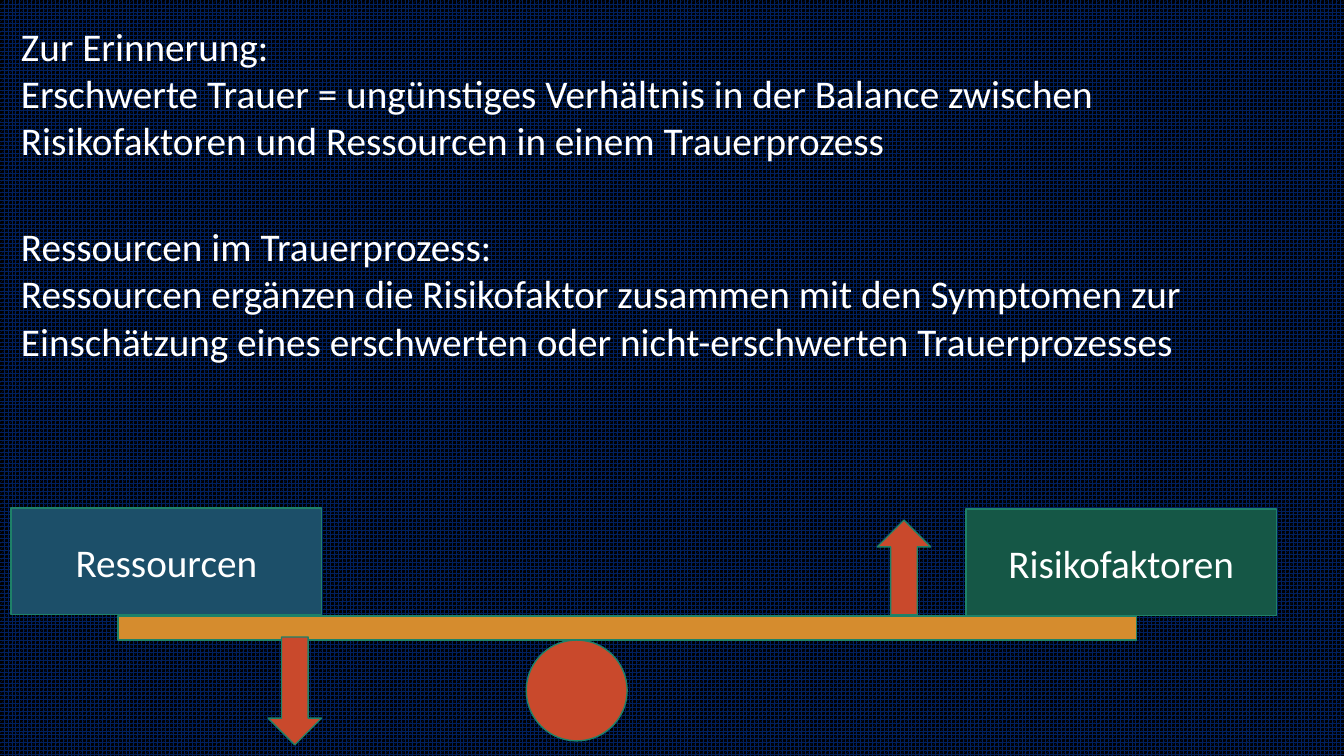
from pptx import Presentation
from pptx.dml.color import RGBColor
from pptx.enum.dml import MSO_PATTERN
from pptx.enum.shapes import MSO_SHAPE
from pptx.enum.text import MSO_ANCHOR, MSO_AUTO_SIZE, PP_ALIGN
from pptx.util import Inches, Pt

SPHERE = MSO_PATTERN.SPHERE
RECT, OVAL, DOWN_ARROW = MSO_SHAPE.RECTANGLE, MSO_SHAPE.OVAL, MSO_SHAPE.DOWN_ARROW
MIDDLE, CENTER = MSO_ANCHOR.MIDDLE, PP_ALIGN.CENTER
FIT_SHAPE = MSO_AUTO_SIZE.SHAPE_TO_FIT_TEXT

WHITE, BLACK, NAVY = "FFFFFF", "000000", "002060"
OUTLINE, ORANGE, RED = "1E8168", "D58C2E", "C9492C"
BLUE, GREEN = "1C4F69", "155746"
FONT = {"name": "Calibri", "size": Pt(28)}

REMINDER = (
    "Zur Erinnerung:",
    "Erschwerte Trauer = ungünstiges Verhältnis in der Balance zwischen "
    "Risikofaktoren und Ressourcen in einem Trauerprozess",
)
RESOURCES = (
    "Ressourcen im Trauerprozess:",
    "Ressourcen ergänzen die Risikofaktor zusammen mit den Symptomen zur "
    "Einschätzung eines erschwerten oder nicht-erschwerten Trauerprozesses",
)


def rgb(value):
    return RGBColor.from_string(value)


def add_run(p, text):
    r = p.add_run()
    r.text = text
    for name, value in FONT.items():
        setattr(r.font, name, value)
    r.font.color.rgb = rgb(WHITE)


def set_background(s):
    fill = s.background.fill
    fill.patterned()
    fill.pattern = SPHERE
    fill.fore_color.rgb = rgb(NAVY)
    fill.back_color.rgb = rgb(BLACK)


def add_text_block(s, left, top, width, height, lines):
    box = s.shapes.add_textbox(*map(Inches, (left, top, width, height)))
    tf = box.text_frame
    tf.word_wrap = True
    tf.auto_size = FIT_SHAPE
    for i, line in enumerate(lines):
        p = tf.add_paragraph() if i else tf.paragraphs[0]
        add_run(p, line)


def add_part(s, kind, left, top, width, height, color, text="", rotation=0):
    """Add one filled, outlined part of the seesaw."""
    sp = s.shapes.add_shape(kind, *map(Inches, (left, top, width, height)))
    sp.shadow.inherit = False
    sp.rotation = rotation
    sp.fill.solid()
    sp.fill.fore_color.rgb = rgb(color)
    sp.line.color.rgb = rgb(OUTLINE)
    sp.line.width = Pt(1)
    if text:
        tf = sp.text_frame
        tf.vertical_anchor = MIDDLE
        p = tf.paragraphs[0]
        p.alignment = CENTER
        add_run(p, text)


def add_seesaw(s, left, top, width):
    """Place beam, weights, pivot and arrows in a box of the given width."""
    weight_w, weight_h, beam_h, arrow_w = 3.08, 1.06, 0.24, 0.53
    beam_top = top + weight_h + 0.01
    right = left + width - weight_w
    add_part(s, RECT, left + 1.06, beam_top, 10.1, beam_h, ORANGE)
    add_part(s, RECT, left, top, weight_w, weight_h, BLUE, "Ressourcen")
    add_part(s, RECT, right, top + 0.01, weight_w, weight_h, GREEN, "Risikofaktoren")
    add_part(s, OVAL, left + 5.11, beam_top + beam_h, 1, 1, RED)
    add_part(s, DOWN_ARROW, left + weight_w - arrow_w, beam_top + 0.21,
             arrow_w, 1.07, RED)
    add_part(s, DOWN_ARROW, right - 0.35 - arrow_w, beam_top - 0.95,
             arrow_w, 0.94, RED, rotation=180)


def main():
    prs = Presentation()
    prs.slide_width, prs.slide_height = Inches(13.33), Inches(7.5)
    s = prs.slides.add_slide(prs.slide_layouts[6])
    set_background(s)
    add_text_block(s, 0.11, 0.17, 13.04, 1.51, REMINDER)
    add_text_block(s, 0.11, 2.16, 12.46, 1.51, RESOURCES)
    add_seesaw(s, 0.11, 5.04, 12.55)
    prs.save("out.pptx")


if __name__ == "__main__":
    main()
